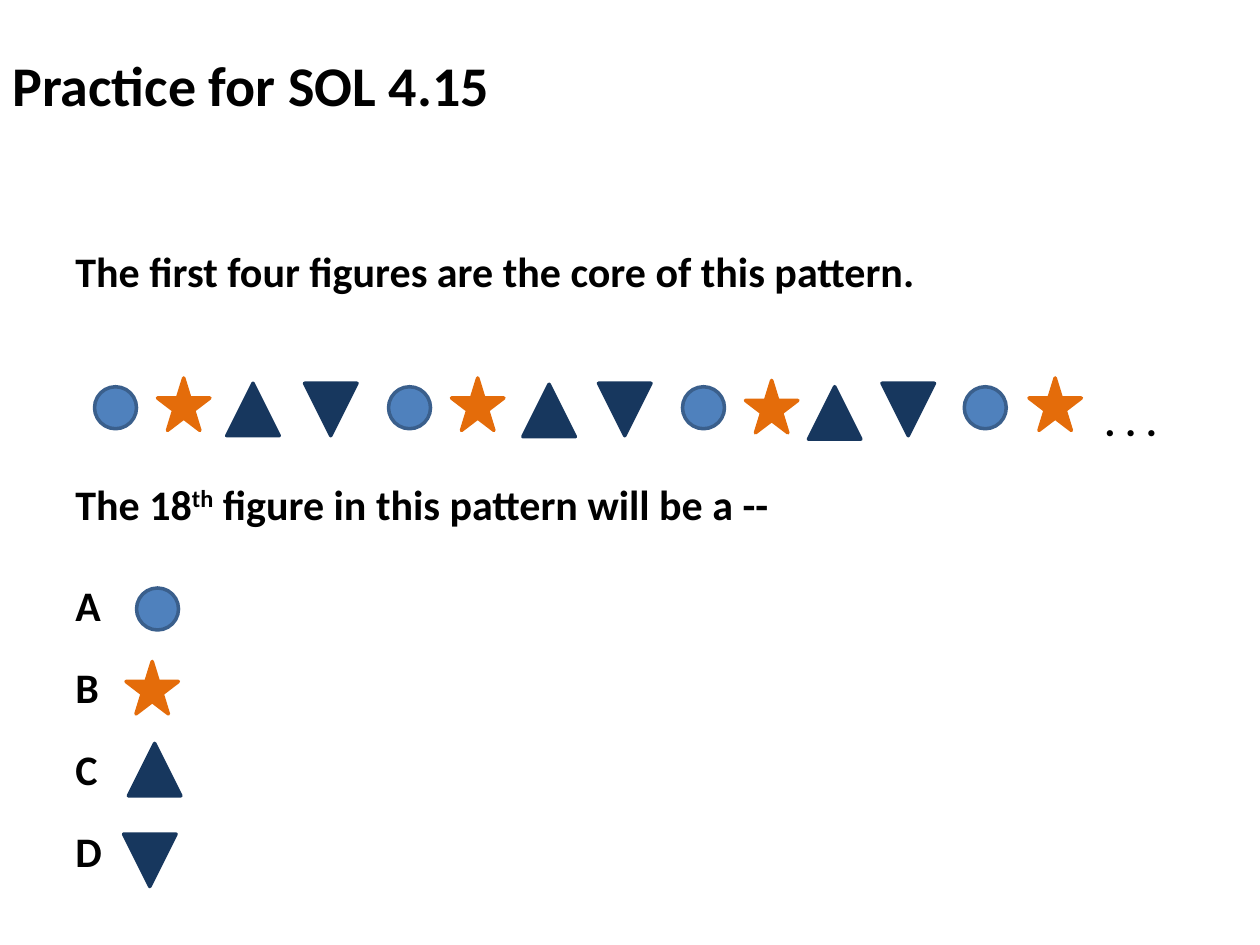
from dataclasses import dataclass
from itertools import cycle

from pptx import Presentation
from pptx.dml.color import RGBColor
from pptx.enum.shapes import MSO_SHAPE
from pptx.enum.text import MSO_ANCHOR
from pptx.util import Pt


@dataclass(frozen=True)
class Theme:
    font: str = "Calibri"
    text: RGBColor = RGBColor(0, 0, 0)
    blue: RGBColor = RGBColor(0x4F, 0x81, 0xBD)
    blue_edge: RGBColor = RGBColor(0x3A, 0x5F, 0x8C)
    orange: RGBColor = RGBColor(0xE4, 0x6C, 0x0A)
    navy: RGBColor = RGBColor(0x17, 0x37, 0x5E)
    title_size: int = 32
    body_size: int = 24
    line_width: int = 2


@dataclass(frozen=True)
class Figure:
    preset: MSO_SHAPE
    size: int
    fill: RGBColor
    edge: RGBColor
    rotation: int = 0


THEME = Theme()
CORE = (
    Figure(MSO_SHAPE.OVAL, 24, THEME.blue, THEME.blue_edge),
    Figure(MSO_SHAPE.STAR_5_POINT, 30, THEME.orange, THEME.orange),
    Figure(MSO_SHAPE.ISOSCELES_TRIANGLE, 30, THEME.navy, THEME.navy),
    Figure(MSO_SHAPE.ISOSCELES_TRIANGLE, 30, THEME.navy, THEME.navy, 180),
)

# Left and top of each figure, in points
PATTERN_SPOTS = (
    (54, 221), (90, 216), (129.6, 219), (174, 219),
    (222, 221), (258, 216), (298.8, 219.6), (342, 219),
    (390, 221), (426, 217.4), (462, 221), (504, 219),
    (551, 221), (588, 216),
)
ANSWER_SPOTS = ((78, 336), (72, 378), (73.4, 424.8), (70.6, 476.6))


def add_text_box(slide, left, top, width, height):
    frame = slide.shapes.add_textbox(Pt(left), Pt(top), Pt(width), Pt(height)).text_frame
    frame.word_wrap = True
    return frame


def write_paragraph(paragraph, text, size=THEME.body_size, before=0, after=0):
    paragraph.text = text
    paragraph.space_before = Pt(before)
    paragraph.space_after = Pt(after)
    font = paragraph.font
    font.name = THEME.font
    font.size = Pt(size)
    font.bold = True
    font.color.rgb = THEME.text


def add_figures(shapes, spots):
    """Place the core figures in turn, one on each spot."""
    for figure, (left, top) in zip(cycle(CORE), spots):
        shape = shapes.add_shape(
            figure.preset, Pt(left), Pt(top), Pt(figure.size), Pt(figure.size)
        )
        shape.shadow.inherit = False
        shape.rotation = figure.rotation
        shape.fill.solid()
        shape.fill.fore_color.rgb = figure.fill
        shape.line.color.rgb = figure.edge
        shape.line.width = Pt(THEME.line_width)


def add_title(slide):
    frame = add_text_box(slide, 0, 3, 648, 90)
    frame.vertical_anchor = MSO_ANCHOR.MIDDLE
    write_paragraph(frame.paragraphs[0], "Practice for SOL 4.15", THEME.title_size)


def add_question(slide):
    frame = add_text_box(slide, 36, 90, 648, 356.4)
    frame.margin_top = Pt(50)
    write_paragraph(
        frame.paragraphs[0], "The first four figures are the core of this pattern."
    )

    # Question with a raised ordinal
    question = frame.add_paragraph()
    write_paragraph(question, "The 18", before=104.5)
    ordinal = question.add_run()
    ordinal.text = "th"
    ordinal.font._element.set("baseline", "30000")
    question.add_run().text = " figure in this pattern will be a --"

    # Answer letters
    for letter in "ABCD":
        before = 29 if letter == "A" else 0
        write_paragraph(frame.add_paragraph(), letter, before=before, after=18)


def main():
    presentation = Presentation()
    presentation.slide_width = Pt(720)
    presentation.slide_height = Pt(540)
    slide = presentation.slides.add_slide(presentation.slide_layouts[6])

    add_title(slide)
    add_question(slide)
    add_figures(slide.shapes, ANSWER_SPOTS)

    # Pattern row and its continuation
    add_figures(slide.shapes.add_group_shape().shapes, PATTERN_SPOTS)
    ellipsis_frame = add_text_box(slide, 624, 222, 78, 36)
    write_paragraph(ellipsis_frame.paragraphs[0], ". . .")

    presentation.save("out.pptx")


if __name__ == "__main__":
    main()
